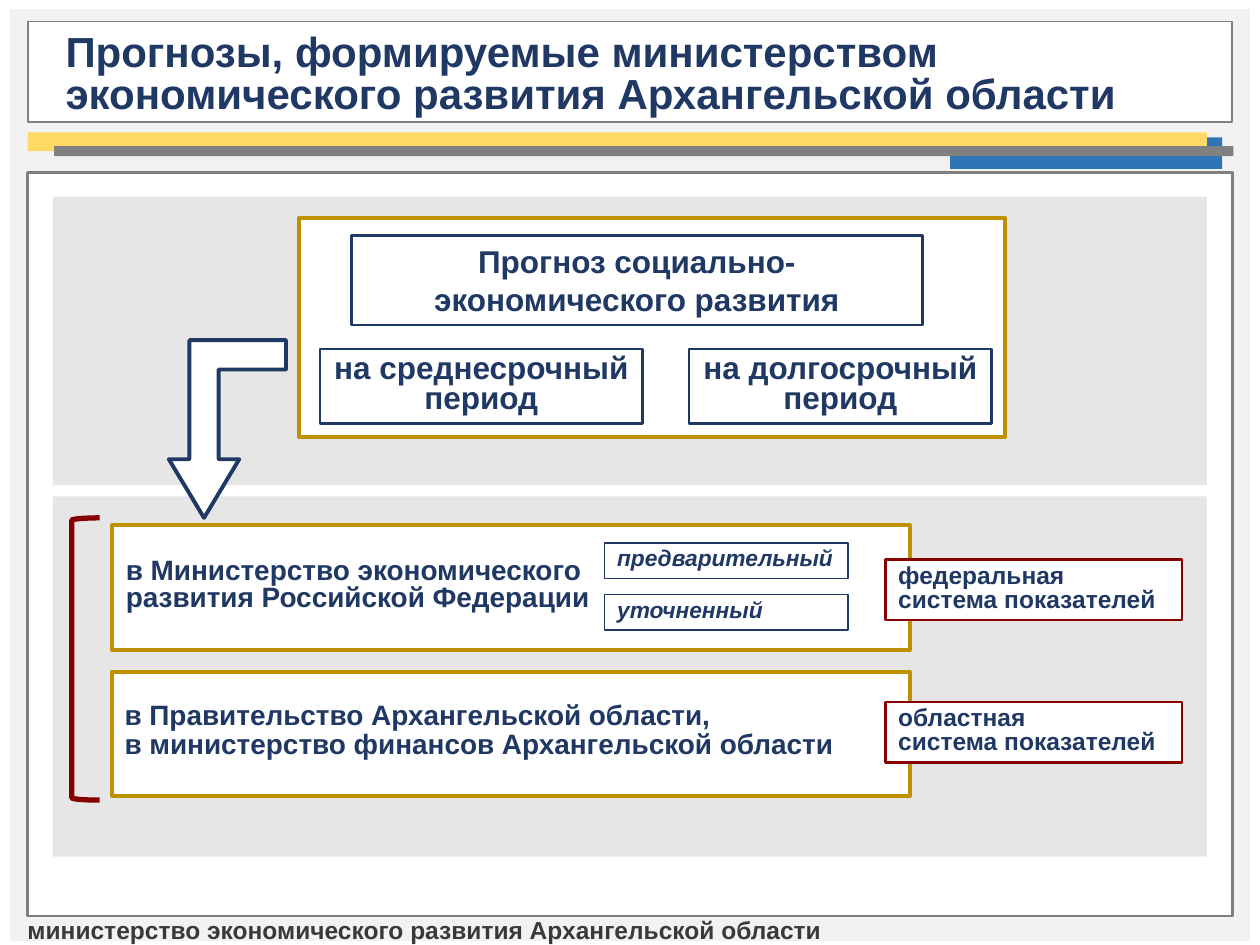
from dataclasses import dataclass

from pptx import Presentation
from pptx.dml.color import RGBColor
from pptx.enum.shapes import MSO_SHAPE
from pptx.enum.text import MSO_ANCHOR, MSO_AUTO_SIZE, PP_ALIGN
from pptx.util import Inches, Pt


@dataclass(frozen=True)
class Theme:
    """Colours, font and type sizes of the deck."""

    font: str = "Arial"
    navy: str = "203864"
    gold: str = "BF9000"
    yellow: str = "FFD966"
    blue: str = "2E75B6"
    maroon: str = "860000"
    white: str = "FFFFFF"
    backdrop: str = "F2F2F2"
    panel: str = "E7E6E6"
    bar: str = "808080"
    frame: str = "7F7F7F"
    charcoal: str = "3B3838"
    title: int = 24
    heading: int = 18
    body: int = 16
    label: int = 14
    note: int = 13


class SlideBuilder:
    """Draws styled elements on the current slide."""

    def __init__(self, page, theme):
        self.page = page
        self.theme = theme

    def shape(self, place, fill=None, line=None, width=1.5, kind=MSO_SHAPE.RECTANGLE):
        """Add a preset shape with a plain fill and outline."""
        box = self.page.shapes.add_shape(kind, *map(Inches, place))
        box.shadow.inherit = False
        if fill:
            box.fill.solid()
            box.fill.fore_color.rgb = RGBColor.from_string(fill)
        else:
            box.fill.background()
        if line:
            box.line.color.rgb = RGBColor.from_string(line)
            box.line.width = Pt(width)
        else:
            box.line.fill.background()
        return box

    def set_text(self, box, text, size, color=None, spacing=1.0,
                 align=PP_ALIGN.LEFT, wrap=True, italic=False):
        """Fill a shape with uniformly formatted text."""
        frame = box.text_frame
        frame.text = text
        frame_format = {
            "word_wrap": wrap,
            "auto_size": MSO_AUTO_SIZE.SHAPE_TO_FIT_TEXT,
            "vertical_anchor": MSO_ANCHOR.TOP,
        }
        for name, value in frame_format.items():
            setattr(frame, name, value)
        font_format = {"name": self.theme.font, "size": Pt(size), "bold": True, "italic": italic}
        for para in frame.paragraphs:
            para.alignment = align
            para.line_spacing = spacing
            for span in para.runs:
                for name, value in font_format.items():
                    setattr(span.font, name, value)
                span.font.color.rgb = RGBColor.from_string(color or self.theme.navy)

    def title(self, place, text):
        """Place the title placeholder above the shapes drawn so far."""
        box = self.page.shapes.title
        for name, value in zip(("left", "top", "width", "height"), place):
            setattr(box, name, Inches(value))
        self.page.shapes._spTree.append(box._element)
        self.set_text(box, text, self.theme.title, spacing=0.85)

    def text(self, place, text, size, **style):
        """Add a text box."""
        self.set_text(self.page.shapes.add_textbox(*map(Inches, place)), text, size, **style)

    def card(self, place, text, size, line=None, width=1.5, **style):
        """Add a white outlined box with text."""
        box = self.shape(place, self.theme.white, line or self.theme.navy, width)
        self.set_text(box, text, size, **style)

    def bracket(self, place):
        """Add a bracket that opens to the right."""
        box = self.shape(place, None, self.theme.maroon, 3, MSO_SHAPE.RIGHT_BRACKET)
        box.rotation = 180

    def bent_arrow(self, place):
        """Add an arrow that turns from the right edge downwards."""
        box = self.shape(place, self.theme.white, self.theme.navy, 2.25, MSO_SHAPE.BENT_UP_ARROW)
        box.rotation = 180
        for index, value in enumerate((0.25, 0.3, 0.5)):
            box.adjustments[index] = value


def main():
    """Build the forecast slide."""
    theme = Theme()
    deck = Presentation()
    deck.slide_width, deck.slide_height = Inches(10), Inches(7.5)
    draw = SlideBuilder(deck.slides.add_slide(deck.slide_layouts[5]), theme)
    process = MSO_SHAPE.FLOWCHART_PROCESS

    draw.shape((0.08, 0.07, 9.84, 7.4), theme.backdrop, kind=process)
    draw.shape((0.22, 1.37, 9.56, 5.9), theme.white, theme.frame, kind=process)
    draw.shape((0.42, 1.56, 9.16, 2.29), theme.panel)
    draw.shape((2.37, 1.73, 5.61, 1.74), theme.white, theme.gold, 2.25)
    draw.shape((0.22, 0.17, 9.56, 0.8), theme.white, theme.frame, 1, process)
    draw.shape((7.54, 1.09, 2.16, 0.25), theme.blue)
    draw.shape((0.22, 1.05, 9.36, 0.15), theme.yellow)
    draw.title((0.42, 0.21, 9.28, 0.79),
               "Прогнозы, формируемые министерством экономического развития Архангельской области")
    draw.shape((0.43, 1.16, 9.36, 0.08), theme.bar)
    draw.text((0.12, 7.21, 6.54, 0.34), "министерство экономического развития Архангельской области",
              theme.label, color=theme.charcoal, wrap=False)

    draw.shape((0.42, 3.94, 9.16, 2.86), theme.panel)
    draw.bracket((0.57, 4.11, 0.22, 2.24))
    for top in (4.17, 5.33):
        draw.shape((0.89, top, 6.33, 0.99), theme.white, theme.gold, 2.25)
    for top, stage in ((4.31, "предварительный"), (4.72, "уточненный")):
        draw.card((4.8, top, 1.93, 0.28), stage, theme.note, width=0.75, spacing=0.8, italic=True)
    draw.text((0.9, 4.39, 4.81, 0.53), "в Министерство экономического развития Российской Федерации",
              theme.body, spacing=0.8)
    draw.text((0.89, 5.53, 6.2, 0.56),
              "в Правительство Архангельской области, \vв министерство финансов Архангельской области",
              theme.body, spacing=0.85)

    draw.card((2.79, 1.87, 4.53, 0.71), "Прогноз социально-экономического развития",
              theme.heading, align=PP_ALIGN.CENTER)
    for left, width, term in ((2.54, 2.56, "на среднесрочный"), (5.47, 2.4, "на долгосрочный")):
        draw.card((left, 2.77, width, 0.59), f"{term}\nпериод", theme.heading,
                  spacing=0.8, align=PP_ALIGN.CENTER, wrap=False)
    draw.bent_arrow((1.34, 2.7, 0.93, 1.41))
    for top, system in ((4.44, "федеральная система показателей"),
                        (5.57, "областная\nсистема показателей")):
        draw.card((7.03, top, 2.35, 0.48), system, theme.label, theme.maroon, spacing=0.8)

    deck.save("out.pptx")


if __name__ == "__main__":
    main()
